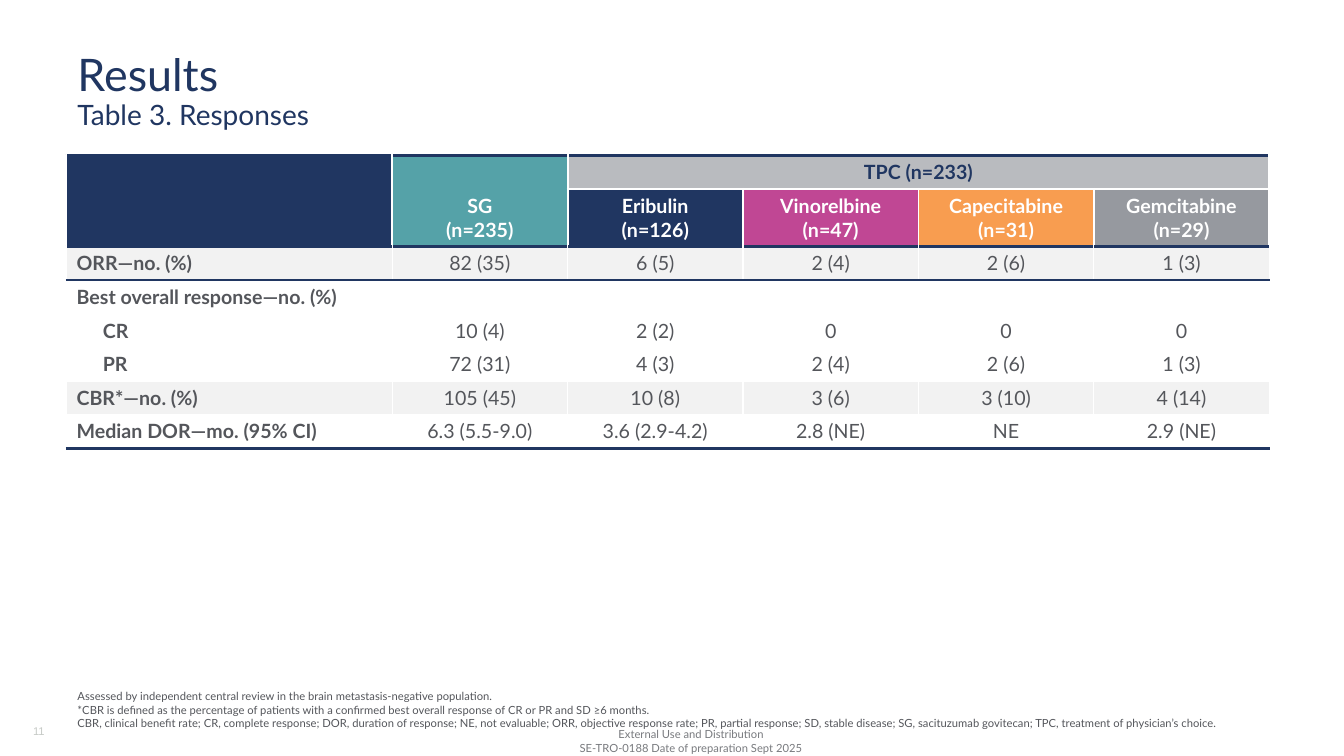
import pptx
import pptx.util
import pptx.dml.color
import pptx.enum.text
import pptx.oxml.ns
import lxml.etree

Inches, Pt = pptx.util.Inches, pptx.util.Pt
ALIGN = pptx.enum.text.PP_ALIGN
ANCHOR = pptx.enum.text.MSO_ANCHOR

# Content
COLORS = {
    "navy": "203661", "teal": "55A2A8", "silver": "B9BBBF", "magenta": "C04794",
    "orange": "F89D50", "grey": "96999F", "band": "F2F2F2", "white": "FFFFFF",
    "body": "54565B", "footer": "787A7E", "number": "C6CAC6",
}
TITLE = [("Results", 32), ("Table 3. Responses", 20)]
# row, column, text, fill, font colour, row span, column span
HEADERS = [
    (0, 0, "", "navy", "white", 2, 1),
    (0, 1, "SG\n(n=235)", "teal", "white", 2, 1),
    (0, 2, "TPC (n=233)", "silver", "navy", 1, 4),
    (1, 2, "Eribulin\n(n=126)", "navy", "white", 1, 1),
    (1, 3, "Vinorelbine\n(n=47)", "magenta", "white", 1, 1),
    (1, 4, "Capecitabine\n(n=31)", "orange", "white", 1, 1),
    (1, 5, "Gemcitabine\n(n=29)", "grey", "white", 1, 1),
]
# label, indent, fill, values
RESPONSES = [
    ("ORR—no. (%)", 0, "band", ["82 (35)", "6 (5)", "2 (4)", "2 (6)", "1 (3)"]),
    ("Best overall response—no. (%)", 0, "white", [""] * 5),
    ("CR", 0.26, "white", ["10 (4)", "2 (2)", "0", "0", "0"]),
    ("PR", 0.26, "white", ["72 (31)", "4 (3)", "2 (4)", "2 (6)", "1 (3)"]),
    ("CBR*—no. (%)", 0, "band", ["105 (45)", "10 (8)", "3 (6)", "3 (10)", "4 (14)"]),
    ("Median DOR—mo. (95% CI)", 0, "white",
     ["6.3 (5.5-9.0)", "3.6 (2.9-4.2)", "2.8 (NE)", "NE", "2.9 (NE)"]),
]
FOOTNOTES = [
    "Assessed by independent central review in the brain metastasis-negative population.",
    "*CBR is defined as the percentage of patients with a confirmed best overall response "
    "of CR or PR and SD ≥6 months.",
    "CBR, clinical benefit rate; CR, complete response; DOR, duration of response; "
    "NE, not evaluable; ORR, objective response rate; PR, partial response; SD, stable disease; "
    "SG, sacituzumab govitecan; TPC, treatment of physician’s choice.",
]
FOOTER = ["External Use and Distribution", "SE-TRO-0188 Date of preparation Sept 2025"]

HEAD_ROWS = 2
COL_WIDTHS = [3.23] + [1.74] * 5
ROW_HEIGHTS = [0.33, 0.57] + [0.33] * len(RESPONSES)
NAVY_RULES = {0: 2.25, 2: 2.25, 3: 1.5, 8: 2.25}  # row boundary: width in points


def rgb(name):
    return pptx.dml.color.RGBColor.from_string(COLORS[name])


def add_run(p, text, size, color, bold=False, font="Lato"):
    r = p.add_run()
    r.text = text
    for key, value in {"size": Pt(size), "bold": bold, "name": font}.items():
        setattr(r.font, key, value)
    r.font.color.rgb = rgb(color)


def add_box(box, anchor):
    tf = s.shapes.add_textbox(*map(Inches, box)).text_frame
    tf.word_wrap = True
    tf.vertical_anchor = anchor
    return tf


def write_lines(tf, lines, size, color, align=ALIGN.LEFT, **style):
    for i, line in enumerate(lines):
        p = tf.add_paragraph() if i else tf.paragraphs[0]
        p.alignment = align
        if line:
            add_run(p, line, size, color, **style)
        else:
            p._p.get_or_add_endParaRPr().set("sz", str(size * 100))


def set_borders(cell, row):
    sides = "LRTB"
    if cell.is_spanned:
        sides = "LRB" if row else "TB"
    bottom = row + (cell.span_height if cell.is_merge_origin else 1)
    side_width = 1.5 if row < HEAD_ROWS else 1
    for side in sides:
        edge = {"T": row, "B": bottom}.get(side)
        color = "navy" if edge in NAVY_RULES else "white"
        width = NAVY_RULES.get(edge, side_width)
        ln = lxml.etree.SubElement(cell._tc.get_or_add_tcPr(), pptx.oxml.ns.qn("a:ln" + side),
                                   w=str(Pt(width)))
        fill = lxml.etree.SubElement(ln, pptx.oxml.ns.qn("a:solidFill"))
        lxml.etree.SubElement(fill, pptx.oxml.ns.qn("a:srgbClr"), val=COLORS[color])


def paint(cell, row, fill):
    set_borders(cell, row)
    cell.fill.solid()
    cell.fill.fore_color.rgb = rgb(fill)


prs = pptx.Presentation()
prs.slide_width, prs.slide_height = Inches(13.33), Inches(7.5)
s = prs.slides.add_slide(prs.slide_layouts[6])

# Footer
write_lines(add_box((5.14, 7.19, 3.43, 0.32), ANCHOR.MIDDLE), FOOTER, 8, "footer", ALIGN.CENTER)

# Title
p = add_box((0.67, 0.15, 11.95, 1.2), ANCHOR.BOTTOM).paragraphs[0]
p.line_spacing = 0.9
for i, (text, size) in enumerate(TITLE):
    if i:
        p.add_line_break()
    add_run(p, text, size, "navy")

# Slide number
write_lines(add_box((0.23, 7.05, 0.6, 0.32), ANCHOR.BOTTOM), ["11"], 8, "number", font="Arial")

# Table grid
table = s.shapes.add_table(len(ROW_HEIGHTS), len(COL_WIDTHS), Inches(0.66), Inches(1.54),
                           Inches(sum(COL_WIDTHS)), Inches(sum(ROW_HEIGHTS))).table
table.first_row = table.horz_banding = False
for col, width in zip(table.columns, COL_WIDTHS):
    col.width = Inches(width)
for row, height in zip(table.rows, ROW_HEIGHTS):
    row.height = Inches(height)

# Header cells
for row, col, text, fill, color, height, width in HEADERS:
    cell = table.cell(row, col)
    if height * width > 1:
        cell.merge(table.cell(row + height - 1, col + width - 1))
    cell.vertical_anchor = ANCHOR.MIDDLE if width > 1 else ANCHOR.BOTTOM
    write_lines(cell.text_frame, text.split("\n"), 14, color, ALIGN.CENTER, bold=True)
    for r in range(row, row + height):
        for c in range(col, col + width):
            paint(table.cell(r, c), r, fill)

# Response rows
for row, (label, indent, fill, values) in enumerate(RESPONSES, HEAD_ROWS):
    for col, text in enumerate([label] + values):
        cell = table.cell(row, col)
        cell.vertical_anchor = ANCHOR.MIDDLE
        write_lines(cell.text_frame, [text], 14, "body",
                    ALIGN.CENTER if col else ALIGN.LEFT, bold=col == 0)
        paint(cell, row, fill)
    table.cell(row, 0).margin_left = Inches(0.1 + indent)

# Footnotes
write_lines(add_box((0.67, 6.79, 11.99, 0.5), ANCHOR.BOTTOM), FOOTNOTES, 8, "body")

prs.save("out.pptx")
